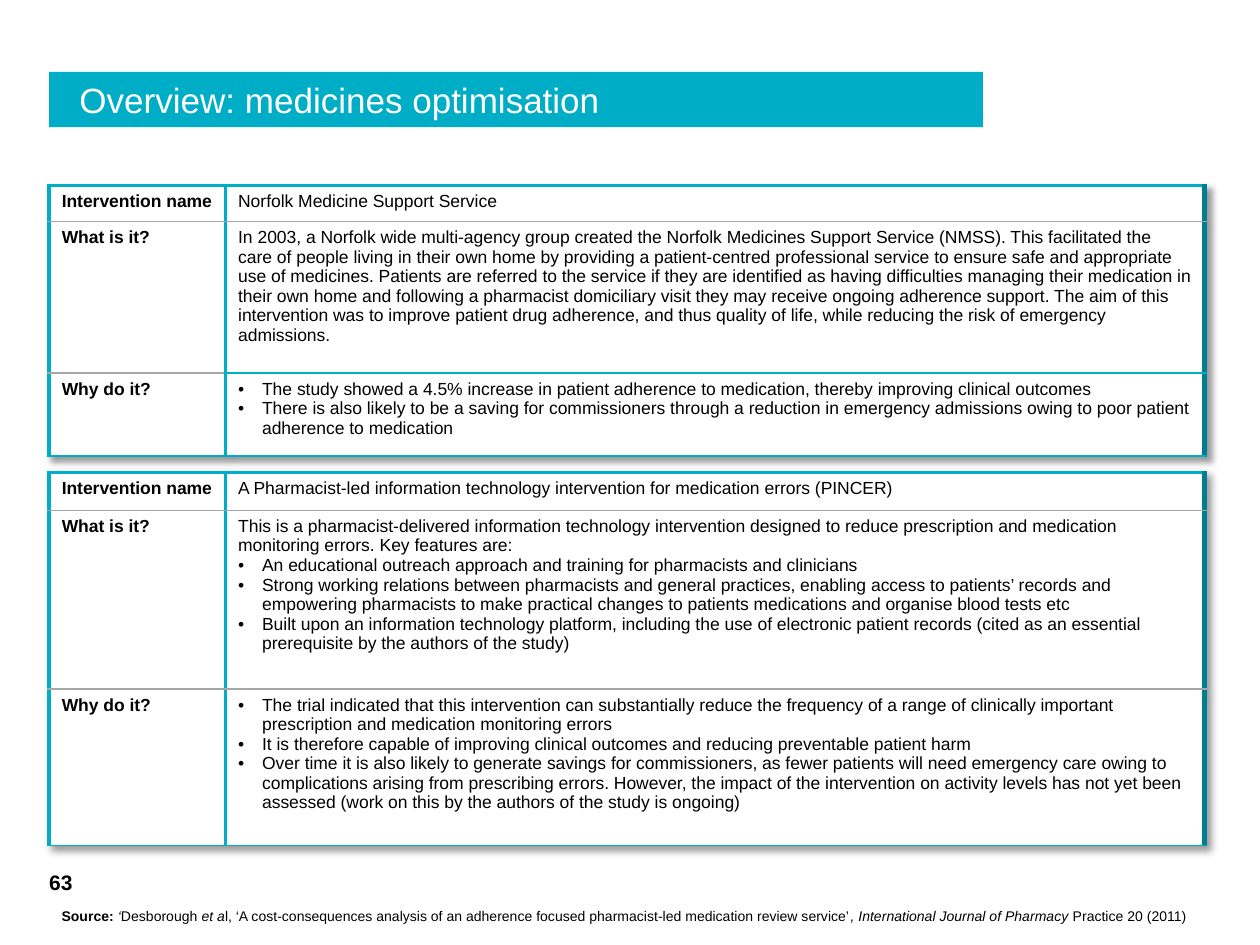
from lxml import etree
from pptx import Presentation
from pptx.dml.color import RGBColor
from pptx.enum.text import MSO_ANCHOR, MSO_AUTO_SIZE, PP_ALIGN
from pptx.oxml import parse_xml
from pptx.oxml.ns import nsdecls, qn
from pptx.util import Inches, Pt

MIDDLE, BOTTOM = MSO_ANCHOR.MIDDLE, MSO_ANCHOR.BOTTOM
LEFT = PP_ALIGN.LEFT
NO_AUTOFIT = MSO_AUTO_SIZE.NONE
TEAL = RGBColor(0x00, 0xAD, 0xC6)
DARK_TEAL = RGBColor(0x00, 0x7E, 0x91)
GREY = RGBColor(0xA6, 0xA6, 0xA6)
WHITE = RGBColor(0xFF, 0xFF, 0xFF)
BLACK = RGBColor(0x00, 0x00, 0x00)
FONT = "Arial"
MARGIN = 0.39
COLUMN_WIDTHS = (1.4, 7.77)
LABELS = ("Intervention name", "What is it?", "Why do it?")

NORFOLK = (
    (["Norfolk Medicine Support Service"], []),
    (["In 2003, a Norfolk wide multi-agency group created the Norfolk Medicines Support Service (NMSS). "
      "This facilitated the",
      "care of people living in their own home by providing a patient-centred professional service to ensure "
      "safe and appropriate use of medicines. Patients are referred to the service if they are identified as "
      "having difficulties managing their medication in their own home and following a pharmacist domiciliary "
      "visit they may receive ongoing adherence support. The aim of this intervention was to improve patient "
      "drug adherence, and thus quality of life, while reducing the risk of emergency admissions."], []),
    ([], ["The study showed a 4.5% increase in patient adherence to medication, thereby improving clinical "
          "outcomes",
          "There is also likely to be a saving for commissioners through a reduction in emergency admissions "
          "owing to poor patient adherence to medication"]),
)
PINCER = (
    (["A Pharmacist-led information technology intervention for medication errors (PINCER)"], []),
    (["This is a pharmacist-delivered information technology intervention designed to reduce prescription "
      "and medication monitoring errors. Key features are:"],
     ["An educational outreach approach and training for pharmacists and clinicians",
      "Strong working relations between pharmacists and general practices, enabling access to patients’ "
      "records and empowering pharmacists to make practical changes to patients medications and organise "
      "blood tests etc",
      "Built upon an information technology platform, including the use of electronic patient records "
      "(cited as an essential prerequisite by the authors of the study)"]),
    ([], ["The trial indicated that this intervention can substantially reduce the frequency of a range of "
          "clinically important prescription and medication monitoring errors",
          "It is therefore capable of improving clinical outcomes and reducing preventable patient harm",
          "Over time it is also likely to generate savings for commissioners, as fewer patients will need "
          "emergency care owing to complications arising from prescribing errors. However, the impact of the "
          "intervention on activity levels has not yet been assessed (work on this by the authors of the "
          "study is ongoing)"]),
)
SOURCE = (
    ("Source: ", True, False),
    ("‘", False, True),
    ("Desborough ", False, False),
    ("et a", False, True),
    ("l, ‘A cost-consequences analysis of an adherence focused pharmacist-led medication review service’",
     False, False),
    (", International Journal of Pharmacy ", False, True),
    ("Practice 20 (2011)", False, False),
)


def style_font(font, size, color=BLACK, bold=False, italic=False):
    font.name = FONT
    font.size = Pt(size)
    font.color.rgb = color
    font.bold = bold
    font.italic = italic


def set_margins(frame, left=0):
    frame.margin_left = Inches(left)
    frame.margin_top = frame.margin_right = frame.margin_bottom = 0


def add_title(slide, text):
    title = slide.shapes.title
    title.left, title.top = Inches(MARGIN), Inches(0.57)
    title.width, title.height = Inches(7.41), Inches(0.44)
    title.fill.solid()
    title.fill.fore_color.rgb = TEAL
    frame = title.text_frame
    frame.text = text
    frame.auto_size = NO_AUTOFIT
    frame.vertical_anchor = MIDDLE
    set_margins(frame, 0.24)
    heading = frame.paragraphs[0]
    heading.alignment = LEFT
    style_font(heading.runs[0].font, 20, WHITE)


def add_textbox(slide, left, top, width, height):
    box = slide.shapes.add_textbox(Inches(left), Inches(top), Inches(width), Inches(height))
    box.text_frame.word_wrap = True
    return box.text_frame


def set_border(cell, side, color, width):
    cell._tc.get_or_add_tcPr().append(parse_xml(
        f'<a:ln{side} {nsdecls("a")} w="{Pt(width)}"><a:solidFill><a:srgbClr val="{color}"/>'
        f'</a:solidFill><a:prstDash val="solid"/></a:ln{side}>'))


def add_bullet(paragraph):
    properties = paragraph._p.get_or_add_pPr()
    properties.set("marL", str(Inches(0.19)))
    properties.set("indent", str(Inches(-0.19)))
    etree.SubElement(properties, qn("a:buFont")).set("typeface", FONT)
    etree.SubElement(properties, qn("a:buChar")).set("char", "•")


def fill_cell(cell, paragraphs, bullets=(), bold=False):
    cell.fill.solid()
    cell.fill.fore_color.rgb = WHITE
    frame = cell.text_frame
    frame.text = "\n".join([*paragraphs, *bullets])
    for index, paragraph in enumerate(frame.paragraphs):
        if index >= len(paragraphs):
            add_bullet(paragraph)
        style_font(paragraph.runs[0].font, 10, bold=bold)


def add_table_shadow(table):
    table._tbl.tblPr.insert(0, parse_xml(
        f'<a:effectLst {nsdecls("a")}><a:outerShdw blurRad="50800" dist="38100" dir="2700000" '
        'algn="tl" rotWithShape="0"><a:srgbClr val="000000"><a:alpha val="40000"/></a:srgbClr>'
        '</a:outerShdw></a:effectLst>'))


def add_intervention(slide, top, row_heights, contents, why_divider):
    table = slide.shapes.add_table(
        len(LABELS), len(COLUMN_WIDTHS), Inches(MARGIN), Inches(top),
        Inches(sum(COLUMN_WIDTHS)), Inches(sum(row_heights))).table
    table.first_row = table.horz_banding = False
    add_table_shadow(table)
    for column, width in zip(table.columns, COLUMN_WIDTHS):
        column.width = Inches(width)
    for row, height in zip(table.rows, row_heights):
        row.height = Inches(height)

    edge, divider, base = (TEAL, 2.25), (GREY, 1), (TEAL, 1)
    label_lines = (edge, divider, divider, base)
    detail_lines = (edge, divider, (why_divider, 1), base)
    for index, (label, (paragraphs, bullets)) in enumerate(zip(LABELS, contents)):
        name, detail = table.cell(index, 0), table.cell(index, 1)
        for cell, lines, right in ((name, label_lines, edge), (detail, detail_lines, (DARK_TEAL, 3))):
            for side, line in zip("LRTB", (edge, right, lines[index], lines[index + 1])):
                set_border(cell, side, *line)
        fill_cell(name, [label], bold=True)
        fill_cell(detail, paragraphs, bullets)


def add_page_number(slide, number):
    frame = add_textbox(slide, MARGIN, 6.9, 0.33, 0.2)
    set_margins(frame)
    frame.vertical_anchor = BOTTOM
    frame.text = number
    style_font(frame.paragraphs[0].runs[0].font, 12, bold=True)


def add_source(slide):
    citation = add_textbox(slide, MARGIN, 7.15, 9.18, 0.24).paragraphs[0]
    citation.space_after = Pt(6)
    for text, bold, italic in SOURCE:
        run = citation.add_run()
        run.text = text
        style_font(run.font, 8, bold=bold, italic=italic)


def main():
    deck = Presentation()
    deck.slide_width, deck.slide_height = Inches(10), Inches(7.5)
    slide = deck.slides.add_slide(deck.slide_layouts[5])
    add_title(slide, "Overview: medicines optimisation")
    add_page_number(slide, "63")
    add_intervention(slide, 1.47, (0.29, 1.2, 0.66), NORFOLK, TEAL)
    add_intervention(slide, 3.75, (0.3, 1.42, 1.24), PINCER, GREY)
    add_source(slide)
    deck.save("out.pptx")


if __name__ == "__main__":
    main()
